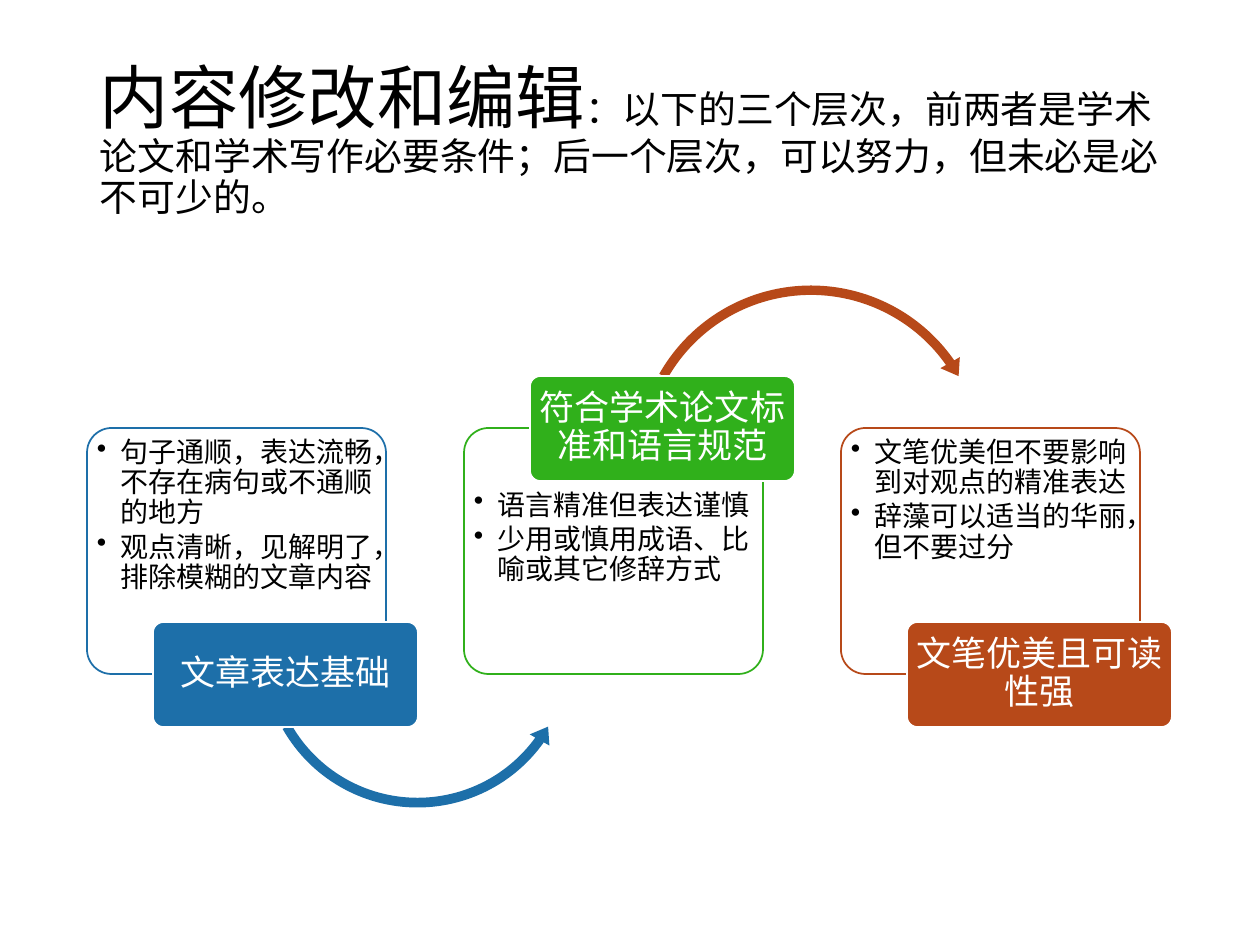
"""Build a slide on three levels of content revision and editing."""
import lxml.etree
import pptx
import pptx.dml.color
import pptx.enum.shapes
import pptx.enum.text
import pptx.oxml.ns
import pptx.util

EMU_PER_PX = 914400 / 126
FONT = "Times New Roman"
BLACK, WHITE = "000000", "FFFFFF"
BLUE, GREEN, RUST = "1D6FA9", "30B01B", "B74919"
SHAPES = pptx.enum.shapes.MSO_SHAPE
ANCHORS = pptx.enum.text.MSO_ANCHOR

CARD_LEFT, CARD_STEP, CARD_TOP = 87, 377, 428
HIGH_BADGE, LOW_BADGE = 376, 622
HIGH_BODY, LOW_BODY = 434, 487

LEVELS = [
    ("文章表达基础", BLUE, LOW_BADGE, HIGH_BODY,
     ["句子通顺，表达流畅，不存在病句或不通顺的地方",
      "观点清晰，见解明了，排除模糊的文章内容"],
     (SHAPES.LEFT_CIRCULAR_ARROW, BLUE, (256, 491, 323, 323),
      (0.03, 3.63, 21.38, 90.25, 0.035))),
    ("符合学术论文标准和语言规范", GREEN, HIGH_BADGE, LOW_BODY,
     ["语言精准但表达谨慎", "少用或慎用成语、比喻或其它修辞方式"],
     (SHAPES.CIRCULAR_ARROW, RUST, (630, 279, 362, 362),
      (0.026, 3.22, 195.02, 125.76, 0.031))),
    ("文笔优美且可读性强", RUST, LOW_BADGE, HIGH_BODY,
     ["文笔优美但不要影响到对观点的精准表达",
      "辞藻可以适当的华丽，但不要过分"], None),
]


def px(length):
    return pptx.util.Emu(round(length * EMU_PER_PX))


def color(hex_code):
    return pptx.dml.color.RGBColor.from_string(hex_code)


def style_run(run, size, hex_code):
    run.font.name = FONT
    run.font.size = pptx.util.Pt(size)
    run.font.color.rgb = color(hex_code)


def set_frame(frame, anchor, inset_x, inset_y):
    frame.word_wrap = True
    frame.vertical_anchor = anchor
    frame.margin_left = frame.margin_right = px(inset_x)
    frame.margin_top = frame.margin_bottom = px(inset_y)


def add_outline(slide, kind, box, fill, line=None, adjustments=(0.1,)):
    shape = slide.shapes.add_shape(kind, *map(px, box))
    shape.shadow.inherit = False
    shape.fill.solid()
    shape.fill.fore_color.rgb = color(fill)
    if line:
        shape.line.color.rgb = color(line)
        shape.line.width = pptx.util.Pt(1)
    else:
        shape.line.fill.background()
    for index, value in enumerate(adjustments):
        shape.adjustments[index] = value
    return shape


def add_title(slide, heading, remark):
    frame = slide.shapes.add_textbox(*map(px, (87, 50, 1086, 183))).text_frame
    set_frame(frame, ANCHORS.MIDDLE, 13, 6)
    paragraph = frame.paragraphs[0]
    paragraph.line_spacing = 0.9
    for words, size in ((heading, 39.6), (remark, 21.6)):
        run = paragraph.add_run()
        run.text = words
        style_run(run, size, BLACK)


def add_card(slide, left, line):
    card = add_outline(slide, SHAPES.ROUNDED_RECTANGLE,
                       (left, CARD_TOP, 299, 246), WHITE, line)
    tint = card.fill._xPr.find(".//" + pptx.oxml.ns.qn("a:srgbClr"))
    lxml.etree.SubElement(tint, pptx.oxml.ns.qn("a:alpha"), val="90000")


def add_points(slide, left, top, points):
    frame = slide.shapes.add_textbox(*map(px, (left, top, 287, 183))).text_frame
    set_frame(frame, ANCHORS.TOP, 4, 4)
    frame.text = "\n".join(points)
    for paragraph in frame.paragraphs:
        paragraph.level = 1
        paragraph.line_spacing = 0.9
        paragraph.space_after = pptx.util.Pt(2.4)
        style_run(paragraph.runs[0], 16, BLACK)
        properties = paragraph._p.get_or_add_pPr()
        properties.set("marL", str(px(24)))
        properties.set("indent", str(-px(24)))
        lxml.etree.SubElement(properties, pptx.oxml.ns.qn("a:buChar"), char="•")


def add_badge(slide, left, top, caption, fill):
    badge = add_outline(slide, SHAPES.ROUNDED_RECTANGLE,
                        (left, top, 265, 105), fill, WHITE)
    set_frame(badge.text_frame, ANCHORS.MIDDLE, 4, 4)
    badge.text_frame.text = caption
    paragraph = badge.text_frame.paragraphs[0]
    paragraph.alignment = pptx.enum.text.PP_ALIGN.CENTER
    paragraph.line_spacing = 0.9
    style_run(paragraph.runs[0], 20, WHITE)


def main():
    deck = pptx.Presentation()
    deck.slide_width, deck.slide_height = px(1260), px(945)
    slide = deck.slides.add_slide(deck.slide_layouts[6])
    add_title(slide, "内容修改和编辑",
              "：以下的三个层次，前两者是学术论文和学术写作必要条件；"
              "后一个层次，可以努力，但未必是必不可少的。")
    for index, level in enumerate(LEVELS):
        caption, hue, badge_top, body_top, points, arrow = level
        left = CARD_LEFT + index * CARD_STEP
        add_card(slide, left, hue)
        add_points(slide, left + 6, body_top, points)
        if arrow:
            kind, arrow_hue, box, adjustments = arrow
            add_outline(slide, kind, box, arrow_hue, adjustments=adjustments)
        add_badge(slide, left + 66, badge_top, caption, hue)
    deck.save("out.pptx")


if __name__ == "__main__":
    main()
